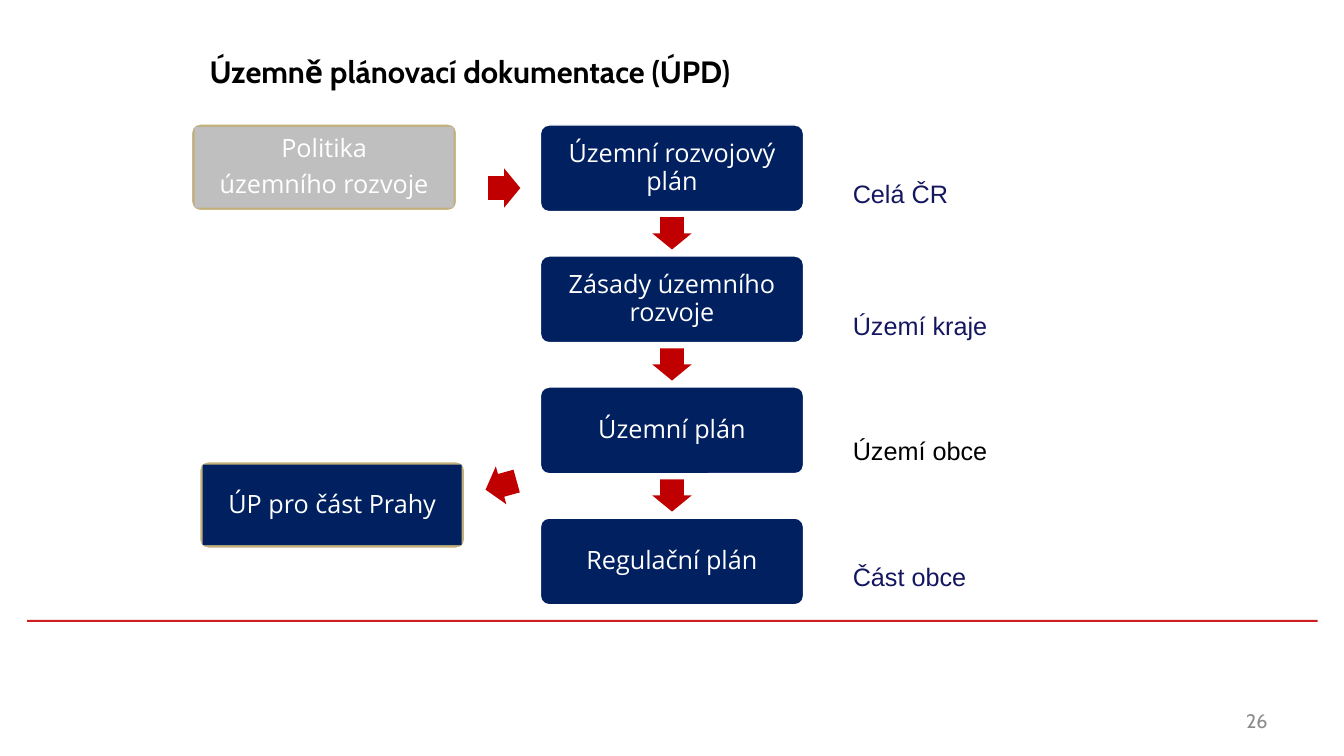
from pptx import Presentation
from pptx.dml.color import RGBColor
from pptx.enum.shapes import MSO_SHAPE
from pptx.enum.text import MSO_ANCHOR, PP_ALIGN
from pptx.util import Inches, Pt

NAVY = RGBColor(0x00, 0x20, 0x60)
INK = RGBColor(0x14, 0x17, 0x60)
RED = RGBColor(0xC0, 0x00, 0x00)
RULE_RED = RGBColor(0xCD, 0x1F, 0x21)
GOLD = RGBColor(0xC2, 0xB0, 0x7C)
SILVER = RGBColor(0xBF, 0xBF, 0xBF)
GREY = RGBColor(0x8C, 0x8C, 0x8C)
WHITE = RGBColor(0xFF, 0xFF, 0xFF)
BLACK = RGBColor(0x00, 0x00, 0x00)

# Grid of the flow chart, in inches
SLIDE_WIDTH, SLIDE_HEIGHT = 13.33, 7.5
CENTRE = SLIDE_WIDTH / 2
FIRST_TOP, ROW_STEP = 1.24, 1.3
BOX_WIDTH, BOX_HEIGHT = 2.61, 0.86
SIDE_WIDTH = 2.63
FRAME = 0.03
ARROW_LENGTH, ARROW_WIDTH = 0.32, 0.39

deck = Presentation()
deck.slide_width, deck.slide_height = Inches(SLIDE_WIDTH), Inches(SLIDE_HEIGHT)
page = deck.slides.add_slide(deck.slide_layouts[6])


def add_block(kind, left, top, width, height, color, outlined=False):
    block = page.shapes.add_shape(
        kind, Inches(left), Inches(top), Inches(width), Inches(height))
    block.shadow.inherit = False
    block.fill.solid()
    block.fill.fore_color.rgb = color
    if outlined:
        block.line.color.rgb = WHITE
        block.line.width = Pt(1)
        block.adjustments[0] = 0.1
    else:
        block.line.fill.background()
    return block


def write(box, text, size, font, color, align=PP_ALIGN.LEFT, boxed=False):
    frame = box.text_frame
    frame.text = text
    frame.word_wrap = True
    if boxed:
        frame.margin_left = frame.margin_right = Inches(0.07)
        frame.margin_top = frame.margin_bottom = Inches(0.07)
        frame.vertical_anchor = MSO_ANCHOR.MIDDLE
    for para in frame.paragraphs:
        para.alignment = align
        if boxed:
            para.line_spacing = 0.9
            para.space_after = Pt(0.35 * size)
        for span in para.runs:
            span.font.size = Pt(size)
            span.font.name = font
            span.font.color.rgb = color
    return frame


# Rule above the footer
add_block(MSO_SHAPE.RECTANGLE, 0.27, 6.15, 12.8, 0.02, RULE_RED)

# Title and page number
title = page.shapes.add_textbox(Inches(1.98), Inches(0.18), Inches(10.43), Inches(1.05))
title_frame = write(title, "Územně plánovací dokumentace (ÚPD)", 22, "Cabin", BLACK)
title_frame.vertical_anchor = MSO_ANCHOR.MIDDLE
title_frame.paragraphs[0].runs[0].font.bold = True

number = page.shapes.add_textbox(Inches(9.56), Inches(6.95), Inches(3.11), Inches(0.4))
number_frame = write(number, "26", 14, "Cabin", GREY, PP_ALIGN.RIGHT)
number_frame.vertical_anchor = MSO_ANCHOR.MIDDLE

# Main column of documents with the territory each one covers
levels = [
    ("Územní rozvojový plán", "Celá ČR", 1.72, INK),
    ("Zásady územního rozvoje", "Území kraje", 3.03, INK),
    ("Územní plán", "Území obce", 4.27, BLACK),
    ("Regulační plán", "Část obce", 5.52, INK),
]
for row, (document, territory, label_top, label_color) in enumerate(levels):
    top = FIRST_TOP + row * ROW_STEP
    box = add_block(MSO_SHAPE.ROUNDED_RECTANGLE, CENTRE - BOX_WIDTH / 2, top,
                    BOX_WIDTH, BOX_HEIGHT, NAVY, outlined=True)
    write(box, document, 18, "Open Sans", WHITE, PP_ALIGN.CENTER, boxed=True)
    label = page.shapes.add_textbox(
        Inches(8.36), Inches(label_top), Inches(1.91), Inches(0.4))
    write(label, territory, 18, "Arial", label_color)

# Side documents: a panel in a thin gold frame
side_documents = [
    ("ÚP pro část Prahy", 1.98, 4.58, NAVY),
    ("Politika\núzemního rozvoje", 1.9, 1.23, SILVER),
]
for document, left, top, color in side_documents:
    add_block(MSO_SHAPE.ROUNDED_RECTANGLE, left, top, SIDE_WIDTH, BOX_HEIGHT,
              GOLD, outlined=True)
    panel = add_block(MSO_SHAPE.RECTANGLE, left + FRAME, top + FRAME,
                      SIDE_WIDTH - 2 * FRAME, BOX_HEIGHT - 2 * FRAME, color)
    write(panel, document, 18, "Open Sans", WHITE, PP_ALIGN.CENTER, boxed=True)

# Arrows: three down the column, one from and one to a side document
arrows = [(CENTRE - ARROW_LENGTH / 2, 2.12 + row * ROW_STEP, 90)
          for row in range(len(levels) - 1)]
arrows += [(4.81, 4.62, 164.5), (4.84, 1.67, 0)]
for left, top, angle in arrows:
    arrow = add_block(MSO_SHAPE.RIGHT_ARROW, left, top, ARROW_LENGTH, ARROW_WIDTH, RED)
    arrow.adjustments[0] = 0.6
    arrow.adjustments[1] = 0.5
    arrow.rotation = angle

deck.save("out.pptx")
